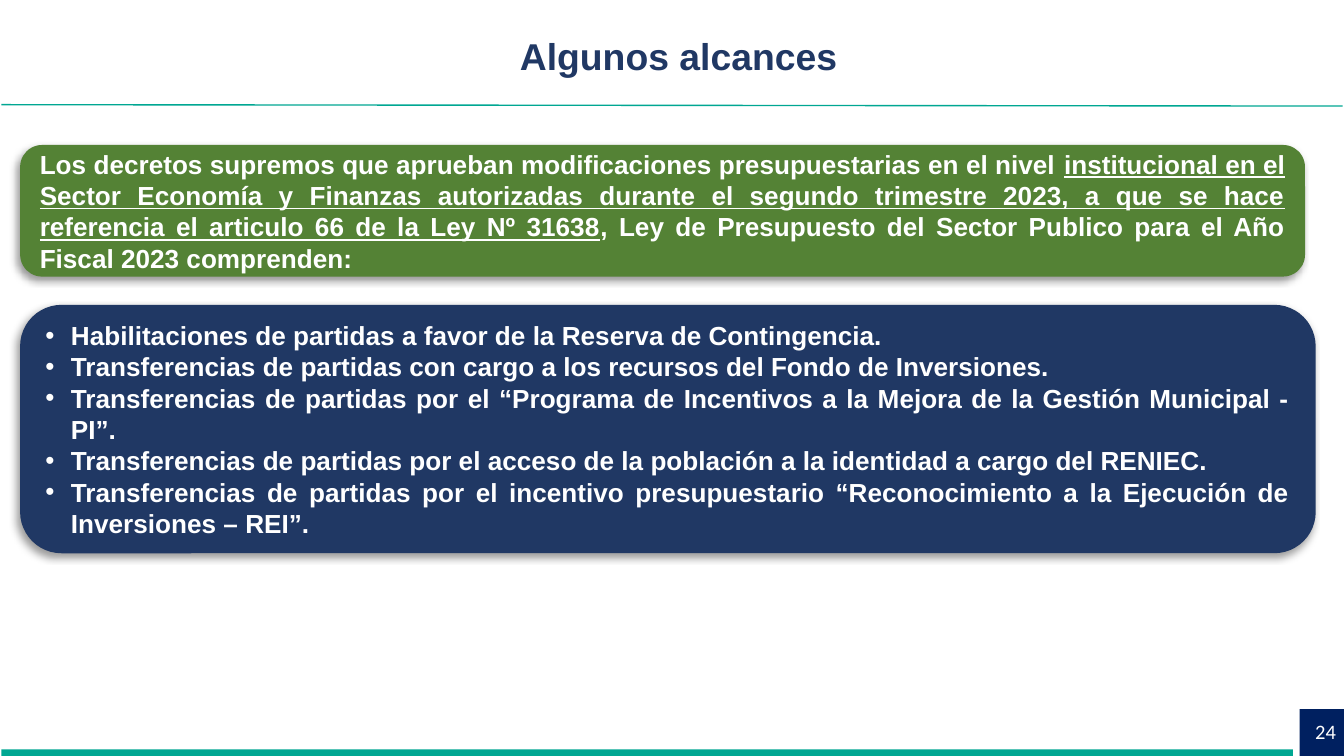
from dataclasses import dataclass

from lxml.etree import SubElement
from pptx import Presentation
from pptx.dml.color import RGBColor
from pptx.enum.shapes import MSO_CONNECTOR as Link, MSO_SHAPE as Form
from pptx.enum.text import MSO_ANCHOR as Anchor, MSO_AUTO_SIZE as Fit, PP_ALIGN as Align
from pptx.oxml.ns import qn
from pptx.util import Inches, Pt

WIDE, HIGH = Inches(10.01), Inches(5.63)
HEX = {"teal": "00A792", "night": "002060", "navy": "203864",
       "green": "548235", "white": "FFFFFF", "black": "000000"}
BODY = {"name": "Arial", "size": Pt(14), "bold": True}
HEAD = {"name": "Arial", "size": Pt(20), "bold": True}
PAGE = {"name": "Calibri", "size": Pt(11), "bold": False}
INDENT = Inches(0.19)


@dataclass
class Area:
    """Place and size as percent of the slide's width and height."""
    left: float
    top: float
    width: float
    height: float

    def box(self) -> tuple:
        return (across(self.left), down(self.top),
                across(self.width), down(self.height))


@dataclass
class Run:
    text: str
    line: bool = False


@dataclass
class Panel:
    area: Area
    tint: str
    paras: list[list[Run]]
    bullets: bool = False


BARS = [(Area(0.1, 99.11, 96.1, 0.89), "teal"),
        (Area(96.7, 93.78, 3.3, 6.22), "night")]
PANELS = [
    Panel(Area(1.5, 19.18, 95.6, 17.41), "green", [[
        Run("Los decretos supremos que aprueban modificaciones presupuestarias en el nivel "),
        Run("institucional en el Sector Economía y Finanzas autorizadas durante el segundo "
            "trimestre 2023, a que se hace referencia el articulo 66 de la Ley Nº 31638", True),
        Run(", Ley de Presupuesto del Sector Publico para el Año Fiscal 2023 comprenden:")]]),
    Panel(Area(1.5, 40.32, 96.4, 32.86), "navy", [[Run(text)] for text in (
        "Habilitaciones de partidas a favor de la Reserva de Contingencia.",
        "Transferencias de partidas con cargo a los recursos del Fondo de Inversiones.",
        "Transferencias de partidas por el “Programa de Incentivos a la Mejora de la "
        "Gestión Municipal - PI”.",
        "Transferencias de partidas por el acceso de la población a la identidad a cargo "
        "del RENIEC.",
        "Transferencias de partidas por el incentivo presupuestario “Reconocimiento a la "
        "Ejecución de Inversiones – REI”.")], True),
]


def across(share: float) -> int:
    return round(WIDE * share / 100)


def down(share: float) -> int:
    return round(HIGH * share / 100)


def color(name: str) -> RGBColor:
    return RGBColor.from_string(HEX[name])


def style(font, look: dict, tint: str) -> None:
    for key, value in look.items():
        setattr(font, key, value)
    font.color.rgb = color(tint)


def add_form(slide, form, area: Area, tint: str):
    shape = slide.shapes.add_shape(form, *area.box())
    shape.shadow.inherit = False
    shape.fill.solid()
    shape.fill.fore_color.rgb = color(tint)
    shape.line.fill.background()
    return shape


def add_shade(shape) -> None:
    """Cast a soft shadow to the lower left."""
    effects = shape._element.spPr.find(qn("a:effectLst"))
    shade = SubElement(effects, qn("a:outerShdw"), blurRad=str(Pt(4)),
                       dist=str(Pt(3)), dir=str(135 * 60000), rotWithShape="0")
    black = SubElement(shade, qn("a:srgbClr"), val=HEX["black"])
    SubElement(black, qn("a:alpha"), val="40000")


def add_bullet(para) -> None:
    props = para._p.get_or_add_pPr()
    props.set("marL", str(INDENT))
    props.set("indent", str(-INDENT))
    SubElement(props, qn("a:buFont"), typeface="Arial")
    SubElement(props, qn("a:buChar"), char="•")


def add_panel(slide, panel: Panel) -> None:
    shape = add_form(slide, Form.ROUNDED_RECTANGLE, panel.area, panel.tint)
    add_shade(shape)
    frame = shape.text_frame
    frame.word_wrap = True
    frame.vertical_anchor = Anchor.MIDDLE
    for at, runs in enumerate(panel.paras):
        para = frame.add_paragraph() if at else frame.paragraphs[0]
        para.alignment = Align.JUSTIFY
        if panel.bullets:
            add_bullet(para)
        for item in runs:
            run = para.add_run()
            run.text = item.text
            style(run.font, BODY | {"underline": item.line}, "white")


def add_rule(slide) -> None:
    rule = slide.shapes.add_connector(Link.STRAIGHT, across(0.1), down(13.85),
                                      across(99.9), down(14.03))
    rule.line.color.rgb = color("teal")
    rule.line.width = Pt(0.75)
    SubElement(rule._element.spPr, qn("a:effectLst"))


def set_text(shape, text: str, look: dict, tint: str, align, anchor) -> None:
    frame = shape.text_frame
    frame.word_wrap = True
    frame.auto_size = Fit.NONE
    frame.vertical_anchor = anchor
    para = frame.paragraphs[0]
    para.alignment = align
    run = para.add_run()
    run.text = text
    style(run.font, look, tint)


def main() -> None:
    deck = Presentation()
    deck.slide_width, deck.slide_height = WIDE, HIGH
    slide = deck.slides.add_slide(deck.slide_layouts[5])
    add_rule(slide)
    for area, tint in BARS:
        add_form(slide, Form.RECTANGLE, area, tint)
    page = slide.shapes.add_textbox(*Area(77.92, 94.14, 22.48, 5.33).box())
    set_text(page, "24", PAGE, "white", Align.RIGHT, Anchor.MIDDLE)
    title = slide.shapes.title
    title.left, title.top, title.width, title.height = Area(28.07, 3.55, 44.86, 11.72).box()
    set_text(title, "Algunos alcances", HEAD, "navy", Align.CENTER, Anchor.TOP)
    for panel in PANELS:
        add_panel(slide, panel)
    deck.save("out.pptx")


if __name__ == "__main__":
    main()
